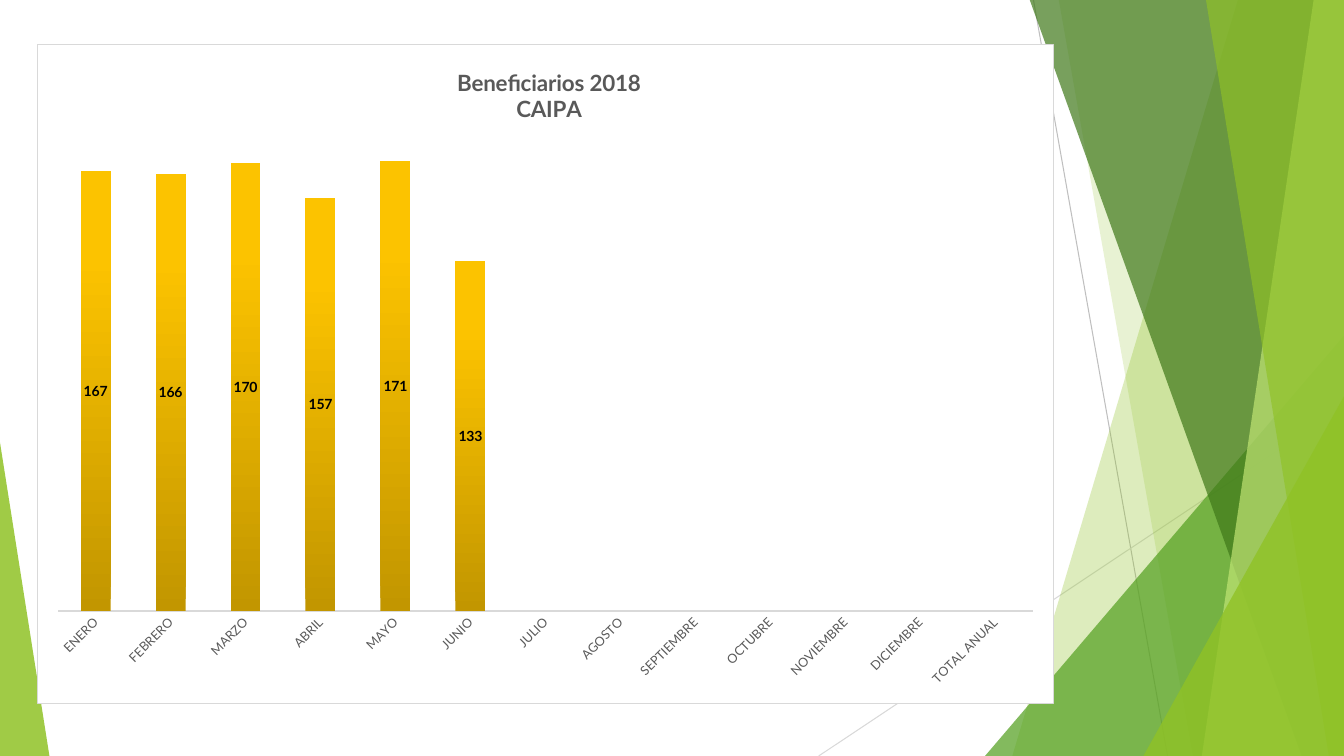
"""Build the slide with the 2018 CAIPA beneficiaries chart."""
from lxml.etree import SubElement
from pptx import Presentation
from pptx.chart.data import CategoryChartData as ChartData
from pptx.dml.color import RGBColor
from pptx.enum.chart import XL_CHART_TYPE as ChartType, XL_LABEL_POSITION as LabelPosition
from pptx.enum.chart import XL_TICK_MARK as TickMark
from pptx.enum.shapes import MSO_CONNECTOR as Connector, MSO_SHAPE as Shape
from pptx.oxml import parse_xml
from pptx.oxml.ns import nsdecls, qn
from pptx.util import Inches, Pt

LIME = RGBColor(0x90, 0xC2, 0x26)
GREEN = RGBColor(0x54, 0xA0, 0x21)
FOREST = RGBColor(0x3F, 0x78, 0x19)
PALE_LIME = RGBColor(0xC0, 0xE4, 0x74)
GRAY = RGBColor(0xBF, 0xBF, 0xBF)
LIGHT_GRAY = RGBColor(0xD9, 0xD9, 0xD9)
TEXT_GRAY = RGBColor(0x59, 0x59, 0x59)
BLACK = RGBColor(0, 0, 0)
GOLD_STOPS = ((0, RGBColor(0xC2, 0x96, 0x00)), (80, RGBColor(0xFC, 0xC3, 0x00)),
              (100, RGBColor(0xFD, 0xC4, 0x00)))
WIDTH, HEIGHT, TOP = 13.33, 7.5, -0.01


def paint(shape, color, opacity):
    shape.shadow.inherit = False
    shape.line.fill.background()
    shape.fill.solid()
    shape.fill.fore_color.rgb = color
    tint = shape.fill._xPr.find(".//" + qn("a:srgbClr"))
    SubElement(tint, qn("a:alpha"), val=str(opacity * 1000))


def place(parent, **values):
    for old in parent.findall(qn("c:layout")):
        parent.remove(old)
    layout = parse_xml(f"<c:layout {nsdecls('c')}><c:manualLayout/></c:layout>")
    for tag, value in values.items():
        SubElement(layout[0], qn("c:" + tag), val=str(value))
    text = parent.find(qn("c:tx"))
    parent.insert(0 if text is None else 1, layout)


deck = Presentation()
deck.slide_width, deck.slide_height = Inches(WIDTH), Inches(HEIGHT)
page = deck.slides.add_slide(deck.slide_layouts[6])

for start_x, start_y, end_x, end_y, color in (
        (10.25, 0, 11.58, HEIGHT, GRAY), (WIDTH, 4.03, 8.12, HEIGHT, LIGHT_GRAY)):
    line = page.shapes.add_connector(
        Connector.STRAIGHT, Inches(start_x), Inches(start_y), Inches(end_x), Inches(end_y))
    line.line.color.rgb = color
    line.line.width = Pt(0.75)
    SubElement(line._element.spPr, qn("a:effectLst"))

bands = [(12.28, 10.04, LIME, 30), (10.5, 11.83, LIME, 20), (10.21, 12.91, FOREST, 70),
         (13.03, 11.92, PALE_LIME, 70), (11.96, 13.18, LIME, 65)]
triangles = {2: (9.77, 3.33, 3.56, 4.17, 1, GREEN, 72),
             5: (11.34, 3.93, 1.99, 3.57, 1, LIME, 80),
             6: (0, 4.39, 0.49, 3.11, 0, LIME, 85)}
for layer in range(7):
    if layer in triangles:
        left, top, width, height, apex, color, opacity = triangles[layer]
        shape = page.shapes.add_shape(
            Shape.ISOSCELES_TRIANGLE, Inches(left), Inches(top), Inches(width), Inches(height))
        shape.adjustments[0] = apex
        paint(shape, color, opacity)
    if layer < len(bands):
        top_x, bottom_x, color, opacity = bands[layer]
        outline = page.shapes.build_freeform(Inches(top_x), Inches(TOP))
        corners = [(WIDTH, TOP), (WIDTH, HEIGHT), (bottom_x, HEIGHT)]
        outline.add_line_segments([(Inches(x), Inches(y)) for x, y in corners])
        paint(outline.convert_to_shape(), color, opacity)

data = ChartData()
data.categories = ["ENERO", "FEBRERO", "MARZO", "ABRIL", "MAYO", "JUNIO", "JULIO", "AGOSTO",
                   "SEPTIEMBRE", "OCTUBRE", "NOVIEMBRE", "DICIEMBRE", "TOTAL ANUAL"]
data.add_series("Series 1", [167, 166, 170, 157, 171, 133] + [None] * 7)
chart = page.shapes.add_chart(ChartType.COLUMN_STACKED, Inches(0.37), Inches(0.44),
                              Inches(10.08), Inches(6.54), data).chart
chart.has_legend = False
chart.has_title = True
title = chart.chart_title
title.text_frame.text = "Beneficiarios 2018\nCAIPA"
place(title._element, xMode="edge", yMode="edge", x=0.41, y=0.03)
place(chart._chartSpace.chart.plotArea, layoutTarget="inner", xMode="edge", yMode="edge",
      x=0.02, y=0.14, w=0.96, h=0.72)
chart._chartSpace.chart.addnext(parse_xml(
    f"<c:spPr {nsdecls('c', 'a')}><a:solidFill><a:srgbClr val='FFFFFF'/></a:solidFill>"
    f"<a:ln w='9525'><a:solidFill><a:srgbClr val='{LIGHT_GRAY}'/></a:solidFill></a:ln></c:spPr>"))

value_axis = chart.value_axis
for name, value in {"minimum_scale": 0, "maximum_scale": 180, "has_major_gridlines": False,
                    "visible": False}.items():
    setattr(value_axis, name, value)
months = chart.category_axis
months.major_tick_mark = months.minor_tick_mark = TickMark.NONE
months.format.line.color.rgb = LIGHT_GRAY
months.format.line.width = Pt(1)

plot = chart.plots[0]
plot.gap_width, plot.overlap, plot.vary_by_categories = 150, 100, False
plot.has_data_labels = True
labels = plot.data_labels
labels.show_value = True
labels.position = LabelPosition.CENTER

fonts = [(chart.font, 10, False, BLACK), (months.tick_labels.font, 9, False, TEXT_GRAY),
         (labels.font, 10, True, BLACK)]
fonts += [(para.runs[0].font, 16, True, TEXT_GRAY) for para in title.text_frame.paragraphs]
for font, size, bold, color in fonts:
    for name, value in {"name": "Lato", "size": Pt(size), "bold": bold}.items():
        setattr(font, name, value)
    font.color.rgb = color
months._element.find(qn("c:txPr")).find(qn("a:bodyPr")).set("rot", "-2700000")

bar_fill = plot.series[0].format.fill
bar_fill.gradient()
gradient = bar_fill._xPr.find(qn("a:gradFill"))
stops = gradient.find(qn("a:gsLst"))
for stop in list(stops):
    stops.remove(stop)
for position, color in GOLD_STOPS:
    stop = SubElement(stops, qn("a:gs"), pos=str(position * 1000))
    SubElement(stop, qn("a:srgbClr"), val=str(color))
gradient.find(qn("a:lin")).set("ang", "16200000")

deck.save("out.pptx")
